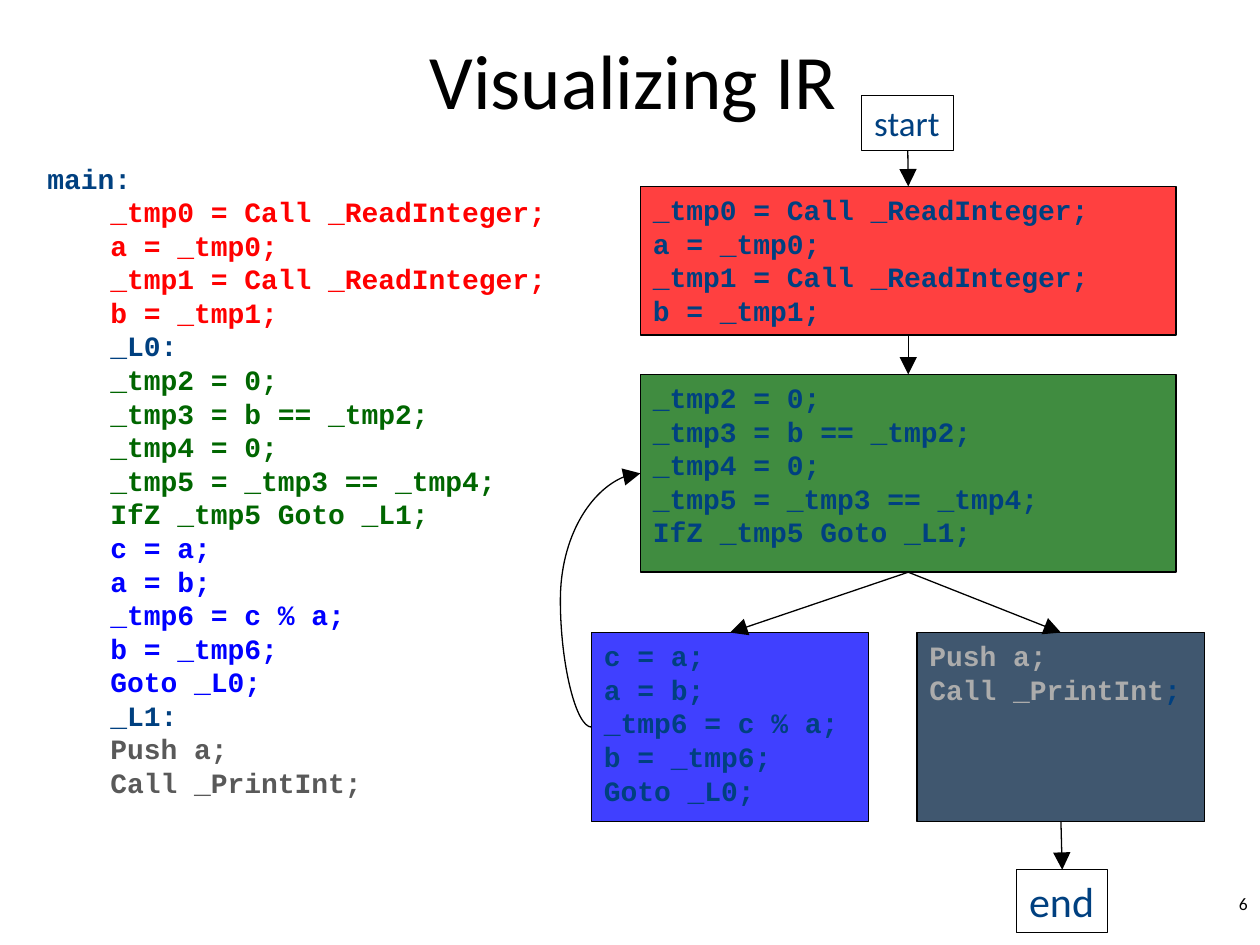
from lxml.etree import SubElement
from pptx import Presentation
from pptx.dml.color import RGBColor
from pptx.enum.shapes import MSO_CONNECTOR, MSO_SHAPE
from pptx.enum.text import MSO_ANCHOR, PP_ALIGN
from pptx.oxml.ns import qn
from pptx.util import Pt

THEME = {
    "title_size": 44, "code_size": 16, "start_size": 20, "end_size": 24, "number_size": 10,
    "code_spacing": 19.2, "line_width": 0.75, "fill_alpha": 75,
    "sans": "Calibri", "mono": "Courier New",
    "black": "000000", "navy": "004080", "red": "FF0000", "green": "006600",
    "blue": "0000FF", "dark": "002040", "gray": "595959", "silver": "ACACAC",
}

TITLE = "Visualizing IR"
PAGE_NUMBER = "6"
CODE = {
    "read": ["_tmp0 = Call _ReadInteger;", "a = _tmp0;", "_tmp1 = Call _ReadInteger;", "b = _tmp1;"],
    "test": ["_tmp2 = 0;", "_tmp3 = b == _tmp2;", "_tmp4 = 0;", "_tmp5 = _tmp3 == _tmp4;",
             "IfZ _tmp5 Goto _L1;"],
    "loop": ["c = a;", "a = b;", "_tmp6 = c % a;", "b = _tmp6;", "Goto _L0;"],
    "print": ["Push a;", "Call _PrintInt;"],
}
LISTING = [
    ("main:", None, None), (None, "read", "red"),
    ("_L0:", None, None), (None, "test", "green"),
    (None, "loop", "blue"),
    ("_L1:", None, None), (None, "print", "gray"),
]
BLOCKS = {
    "read": ((366, 106.5, 306, 85), "red", "navy"),
    "test": ((366, 214, 306, 113), "green", "navy"),
    "loop": ((338, 361.5, 158.5, 108), "blue", "navy"),
    "print": ((524, 361.5, 164.5, 108), "dark", "silver"),
}
TERMINALS = {
    "start": ((492.5, 54.5, 52.5, 31.5), "start_size"),
    "end": ((581, 497, 52, 36), "end_size"),
}
TOP, LEFT, BOTTOM = 0, 1, 2
EDGES = [("start", "read"), ("read", "test"), ("test", "loop"), ("test", "print"), ("print", "end")]
LOOP_BEND = -0.635


def color(name):
    return RGBColor.from_string(THEME[name])


def points(box):
    return [Pt(value) for value in box]


def write(shape, lines, size="code_size", font="mono", bold=False, spacing=None,
          align=PP_ALIGN.LEFT, anchor=MSO_ANCHOR.TOP, wrap=True):
    frame = shape.text_frame
    frame.word_wrap = wrap
    frame.vertical_anchor = anchor
    for index, (runs, indent) in enumerate(lines):
        paragraph = frame.paragraphs[0] if index == 0 else frame.add_paragraph()
        paragraph.alignment = align
        if spacing:
            paragraph.line_spacing = Pt(spacing)
        if indent:
            paragraph._p.get_or_add_pPr().set("marL", str(Pt(indent)))
        for text, color_name in runs:
            run = paragraph.add_run()
            run.text = text
            run.font.size = Pt(THEME[size])
            run.font.name = THEME[font]
            run.font.bold = bold
            run.font.color.rgb = color(color_name)


def write_code(shape, lines):
    write(shape, lines, bold=True, spacing=THEME["code_spacing"])


def add_box(slide, box, fill=None):
    shape = slide.shapes.add_shape(MSO_SHAPE.RECTANGLE, *points(box))
    shape.shadow.inherit = False
    shape.line.color.rgb = color("black")
    shape.line.width = Pt(THEME["line_width"])
    if fill:
        shape.fill.solid()
        shape.fill.fore_color.rgb = color(fill)
        rgb = shape._element.spPr.find(".//" + qn("a:srgbClr"))
        SubElement(rgb, qn("a:alpha"), val=str(THEME["fill_alpha"] * 1000))
    else:
        shape.fill.background()
    return shape


def add_arrow(slide, source, target, begin=BOTTOM, end=TOP, kind=MSO_CONNECTOR.STRAIGHT):
    def site(shape, side):
        if side == LEFT:
            return shape.left, shape.top + shape.height // 2
        return shape.left + shape.width // 2, shape.top + (shape.height if side == BOTTOM else 0)

    arrow = slide.shapes.add_connector(kind, *site(source, begin), *site(target, end))
    arrow.begin_connect(source, begin)
    arrow.end_connect(target, end)
    arrow.line.color.rgb = color("black")
    arrow.line.width = Pt(THEME["line_width"])
    properties = arrow._element.spPr
    SubElement(properties.find(qn("a:ln")), qn("a:tailEnd"), type="triangle", w="lg", len="lg")
    SubElement(properties, qn("a:effectLst"))
    return arrow


def bend(arrow, ratio):
    geometry = arrow._element.spPr.find(qn("a:prstGeom"))
    values = geometry.find(qn("a:avLst"))
    if values is None:
        values = SubElement(geometry, qn("a:avLst"))
    SubElement(values, qn("a:gd"), name="adj1", fmla=f"val {round(ratio * 100000)}")


def main():
    presentation = Presentation()
    presentation.slide_width, presentation.slide_height = Pt(720), Pt(540)
    slide = presentation.slides.add_slide(presentation.slide_layouts[5])

    title = slide.shapes.title
    title.left, title.top, title.width, title.height = points((56, 0, 612, 90))
    write(title, [([(TITLE, "black")], 0)], size="title_size", font="sans",
          align=PP_ALIGN.CENTER, anchor=MSO_ANCHOR.MIDDLE)

    listing = []
    for label, block, color_name in LISTING:
        if label:
            listing.append(([(label, "navy")], 36 if listing else 0))
        else:
            listing += [([(line, color_name)], 36) for line in CODE[block]]
    write_code(slide.shapes.add_textbox(*points((20, 88.5, 306, 402.5))), listing)

    nodes = {}
    for name, (box, fill, text_color) in BLOCKS.items():
        nodes[name] = add_box(slide, box, fill)
        lines = [([(line, text_color)], 0) for line in CODE[name]]
        if name == "print":
            lines[-1] = ([(CODE[name][-1][:-1], text_color), (";", "navy")], 0)
        write_code(nodes[name], lines)
    for name, (box, size) in TERMINALS.items():
        nodes[name] = add_box(slide, box)
        write(nodes[name], [([(name, "navy")], 0)], size=size, font="sans", wrap=False)

    for source, target in EDGES:
        add_arrow(slide, nodes[source], nodes[target])
    bend(add_arrow(slide, nodes["loop"], nodes["test"], begin=LEFT, end=LEFT,
                   kind=MSO_CONNECTOR.CURVE), LOOP_BEND)

    number = slide.shapes.add_textbox(*points((570, 507, 150, 21.5)))
    write(number, [([(PAGE_NUMBER, "black")], 0)], size="number_size", font="sans",
          align=PP_ALIGN.RIGHT)

    presentation.save("out.pptx")


if __name__ == "__main__":
    main()
